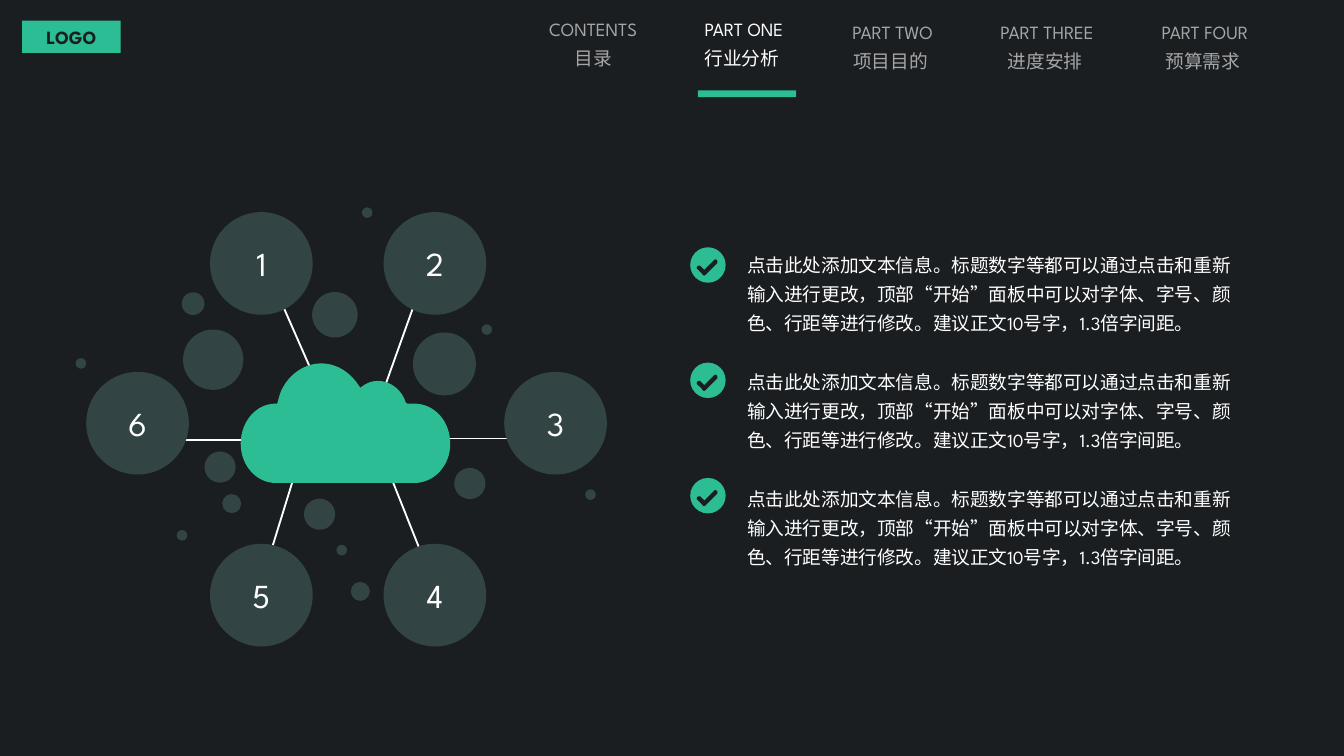
from lxml import etree
from pptx import Presentation
from pptx.dml.color import RGBColor
from pptx.enum import shapes, text
from pptx.oxml import ns
from pptx.util import Cm, Pt

COLOURS = {"back": "1A1E21", "green": "2CBD94", "bubble": "324444",
           "white": "FFFFFF", "grey": "A6A6A6"}
FONT = "League Spartan"

# Menu entries: centre, top, width (cm), heading, caption
MENU = [(11.21, 0.08, 2.44, "CONTENTS", "目录"),
        (14.06, 0.09, 2.31, "PART ONE", "行业分析 "),
        (16.87, 0.14, 2.36, "PART TWO", "项目目的 "),
        (19.79, 0.14, 2.74, "PART THREE", "进度安排 "),
        (22.77, 0.14, 2.54, "PART FOUR", "预算需求 ")]
ACTIVE = "PART ONE"

# Network parts, in cm from the corner of its box
NODES = [(3.51, 1.06), (6.79, 1.06), (9.07, 4.08),
         (6.79, 7.33), (3.51, 7.33), (1.17, 4.08)]
NODE_SIZE = 1.94
SPOKES = [(3.89, 1.80, 4.47, 3.12), (6.50, 1.55, 5.82, 3.45),
          (1.65, 4.39, 3.40, 4.39), (6.68, 4.37, 8.43, 4.37),
          (3.51, 7.09, 4.14, 5.05), (6.68, 6.91, 5.82, 4.75)]
BUBBLES = {1.19: [(6.97, 2.96)],
           1.14: [(2.60, 2.88)],
           0.86: [(4.90, 2.03)],
           0.59: [(4.61, 5.80), (7.45, 5.22), (2.73, 4.91)],
           0.43: [(2.22, 1.82)],
           0.36: [(2.95, 5.60), (5.38, 7.26)],
           0.20: [(5.51, 0.10), (7.77, 2.31), (0.10, 2.95), (9.73, 5.43),
                  (5.03, 6.48), (2.01, 6.20)]}

# Cloud outline: one point is a straight side, three are a Bézier curve
CLOUD_START = (1.52, 0)
CLOUD = [[(1.83, 0), (2.08, 0.18), (2.24, 0.43)], [(2.26, 0.46)],
         [(2.36, 0.38), (2.46, 0.33), (2.59, 0.33)],
         [(2.84, 0.33), (3.05, 0.51), (3.12, 0.74)],
         [(3.15, 0.76)], [(3.28, 0.76)],
         [(3.66, 0.76), (3.96, 1.09), (3.96, 1.52)],
         [(3.96, 1.93), (3.66, 2.26), (3.28, 2.26)], [(0.66, 2.26)],
         [(0.30, 2.26), (0, 1.93), (0, 1.52)],
         [(0, 1.09), (0.30, 0.76), (0.66, 0.76)],
         [(0.69, 0.76)], [(0.74, 0.58)],
         [(0.86, 0.25), (1.17, 0), (1.52, 0)]]

ADVICE = ("点击此处添加文本信息。标题数字等都可以通过点击和重新输入进行更改，"
          "顶部“开始”面板中可以对字体、字号、颜色、行距等进行修改。"
          "建议正文10号字，1.3倍字间距。")
ADVICE_COUNT = 3


def colour(name):
    return RGBColor.from_string(COLOURS[name])


def paint(shape, fill):
    shape.shadow.inherit = False
    shape.fill.solid()
    shape.fill.fore_color.rgb = colour(fill)
    shape.line.fill.background()
    return shape


def add_plain(parent, kind, left, top, width, height, fill):
    shape = parent.add_shape(kind, Cm(left), Cm(top), Cm(width), Cm(height))
    return paint(shape, fill)


def add_disc(parent, centre_x, centre_y, size, fill):
    return add_plain(parent, shapes.MSO_SHAPE.OVAL, centre_x - size / 2,
                     centre_y - size / 2, size, size, fill)


def write(para, words, size, fill, bold=False, align=text.PP_ALIGN.CENTER):
    para.alignment = align
    span = para.add_run()
    span.text = words
    span.font.name = FONT
    span.font.size = Pt(size)
    span.font.bold = bold
    span.font.color.rgb = colour(fill)


def add_paragraphs(parent, box, lines, fill, align, wrap, gap=0):
    frame = parent.add_textbox(*(Cm(side) for side in box)).text_frame
    frame.word_wrap = wrap
    for index, words in enumerate(lines):
        para = frame.add_paragraph() if index else frame.paragraphs[0]
        para.line_spacing = 1.3
        if index and gap:
            para.space_before = Pt(gap)
        write(para, words, 10, fill, align=align)


def add_header(page):
    # Logo plate
    plate = add_plain(page.shapes, shapes.MSO_SHAPE.RECTANGLE,
                      0.42, 0.39, 1.86, 0.61, "green")
    plate.text_frame.vertical_anchor = text.MSO_ANCHOR.MIDDLE
    write(plate.text_frame.paragraphs[0], "LOGO", 10, "back", bold=True)
    # Menu, with a bar under the active entry
    for centre, top, width, heading, caption in MENU:
        active = heading == ACTIVE
        if active:
            add_plain(page.shapes, shapes.MSO_SHAPE.RECTANGLE,
                      centre - 0.87, 1.71, 1.86, 0.13, "green")
        add_paragraphs(page.shapes, (centre - width / 2, top, width, 1.35),
                       (heading, caption), "white" if active else "grey",
                       text.PP_ALIGN.CENTER, wrap=False)


def add_cloud(parent, left, top):
    def place(point):
        return Cm(left + point[0]), Cm(top + point[1])

    builder = parent.build_freeform(*place(CLOUD_START))
    builder.add_line_segments([place(point) for side in CLOUD
                               for point in side], close=True)
    cloud = paint(builder.convert_to_shape(), "green")
    # Join each three-point side into one curve
    lines = iter(list(cloud._element.iter(ns.qn("a:lnTo"))))
    for side in CLOUD:
        steps = [next(lines) for _ in side]
        if len(side) == 3:
            curve = etree.Element(ns.qn("a:cubicBezTo"))
            steps[0].addprevious(curve)
            for step in steps:
                curve.append(step[0])
                step.getparent().remove(step)


def add_network(page, left, top):
    parts = page.shapes.add_group_shape().shapes
    # Spokes behind the cloud
    for x1, y1, x2, y2 in SPOKES:
        spoke = parts.add_connector(
            shapes.MSO_CONNECTOR.STRAIGHT, Cm(left + x1), Cm(top + y1),
            Cm(left + x2), Cm(top + y2))
        spoke.line.color.rgb = colour("white")
        spoke.line.width = Pt(1)
        etree.SubElement(spoke._element.spPr, ns.qn("a:effectLst"))
    add_cloud(parts, left + 3.12, top + 2.95)
    # Numbered nodes, clockwise
    for number, (x, y) in enumerate(NODES, 1):
        node = add_disc(parts, left + x, top + y, NODE_SIZE, "bubble")
        node.text_frame.vertical_anchor = text.MSO_ANCHOR.MIDDLE
        write(node.text_frame.paragraphs[0], str(number), 18, "white")
    # Loose bubbles
    for size, centres in BUBBLES.items():
        for x, y in centres:
            add_disc(parts, left + x, top + y, size, "bubble")


def add_tick(page, left, top):
    parts = page.shapes.add_group_shape().shapes
    add_disc(parts, left + 0.33, top + 0.33, 0.67, "green")
    for x, y, length, angle in ((0.13, 0.41, 0.15, 45), (0.20, 0.36, 0.33, 315)):
        stroke = add_plain(parts, shapes.MSO_SHAPE.RECTANGLE,
                           left + x, top + y, length, 0.03, "back")
        stroke.rotation = angle
        stroke.line.color.rgb = colour("back")
        stroke.line.width = Pt(1.5)


def add_advice(page, left, top):
    add_paragraphs(page.shapes, (left + 0.82, top, 9.91, 6.30),
                   [ADVICE] * ADVICE_COUNT, "white", text.PP_ALIGN.LEFT,
                   wrap=True, gap=15.7)
    for index in range(ADVICE_COUNT):
        add_tick(page, left, top + 0.13 + 2.18 * index)


def main():
    deck = Presentation()
    deck.slide_width, deck.slide_height = Cm(25.4), Cm(14.29)
    page = deck.slides.add_slide(deck.slide_layouts[6])
    page.background.fill.solid()
    page.background.fill.fore_color.rgb = colour("back")
    add_header(page)
    add_network(page, 1.43, 3.92)
    add_advice(page, 13.05, 4.55)
    deck.save("out.pptx")


if __name__ == "__main__":
    main()
